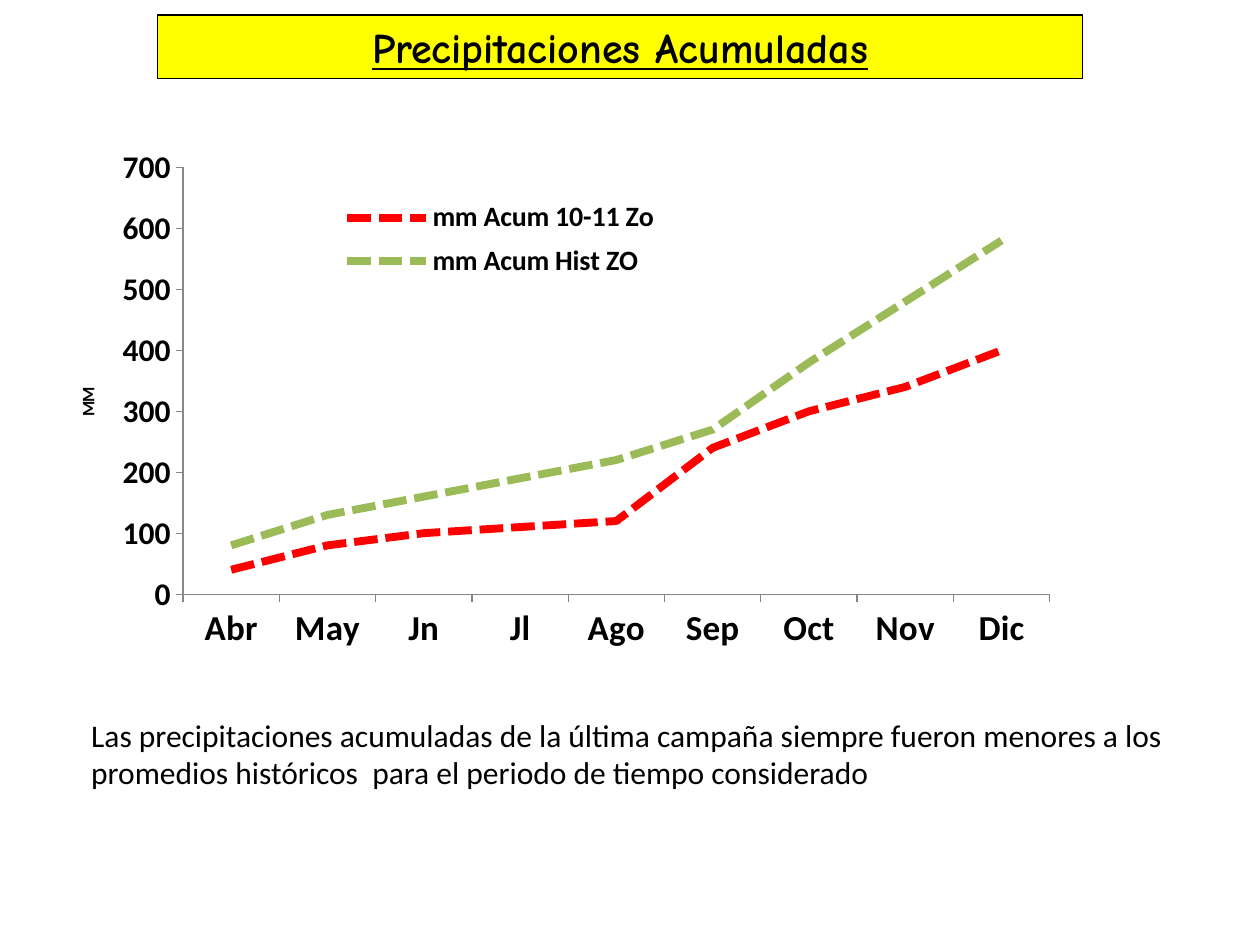
"""Build the slide on accumulated rainfall: title, line chart and conclusion."""
from lxml import etree
from pptx import Presentation
from pptx import util as u
from pptx.chart.data import CategoryChartData
from pptx.dml.color import RGBColor
from pptx.enum import chart as charts, dml, text
from pptx.oxml.ns import qn


def style(font, size, name="Calibri", bold=False, color="000000"):
    """Set the face, size, weight and colour of a font."""
    font.name, font.size, font.bold = name, u.Pt(size), bold
    font.color.rgb = RGBColor.from_string(color)


def place(element, index, inner=False, **fractions):
    """Give a chart part a manual layout in fractions of the chart."""
    for old in element.findall(qn("c:layout")):
        element.remove(old)
    layout = etree.Element(qn("c:layout"))
    manual = etree.SubElement(layout, qn("c:manualLayout"))
    if inner:
        etree.SubElement(manual, qn("c:layoutTarget"), val="inner")
    for side in ("x", "y"):
        etree.SubElement(manual, qn(f"c:{side}Mode"), val="edge")
    for side, value in fractions.items():
        etree.SubElement(manual, qn(f"c:{side}"), val=str(value))
    element.insert(index, layout)


deck = Presentation()
deck.slide_width, deck.slide_height = u.Cm(25.4), u.Cm(19.05)
page = deck.slides.add_slide(deck.slide_layouts[5])

title = page.shapes.title
title.left, title.top = u.Cm(3.18), u.Cm(0.3)
title.width, title.height = u.Cm(18.64), u.Cm(1.28)
title.fill.solid()
title.fill.fore_color.rgb = RGBColor.from_string("FFFF00")
title.line.color.rgb = RGBColor.from_string("000000")
title.line.width = u.Pt(0.75)
title.text_frame.vertical_anchor = text.MSO_ANCHOR.MIDDLE
para = title.text_frame.paragraphs[0]
para.alignment = text.PP_ALIGN.CENTER
span = para.add_run()
span.text = "Precipitaciones Acumuladas"
style(span.font, 24, "Comic Neue", bold=True)
span.font.underline = True

rainfall = CategoryChartData()
rainfall.categories = ["Abr", "May", "Jn", "Jl", "Ago", "Sep", "Oct", "Nov", "Dic"]
rainfall.add_series("mm Acum 10-11 Zo", [40, 80, 100, 110, 120, 240, 300, 340, 400])
rainfall.add_series("mm Acum Hist ZO", [80, 130, 160, 190, 220, 270, 380, 480, 580])
chart = page.shapes.add_chart(
    charts.XL_CHART_TYPE.LINE, u.Cm(0), u.Cm(2.77), u.Cm(24.61), u.Cm(12.12), rainfall
).chart
chart.has_title = False
style(chart.font, 10)
chart.plots[0].vary_by_categories = False
place(chart._chartSpace.chart.plotArea, 0, inner=True, x=0.15, y=0.05, w=0.71, h=0.71)

for series, color in zip(chart.plots[0].series, ("FF0000", "9BBB59")):
    series.smooth = False
    series.marker.style = charts.XL_MARKER_STYLE.NONE
    series.format.line.color.rgb = RGBColor.from_string(color)
    series.format.line.width = u.Pt(4.5)
    series.format.line.dash_style = dml.MSO_LINE.SQUARE_DOT

for axis, size in ((chart.category_axis, 20), (chart.value_axis, 18)):
    style(axis.tick_labels.font, size, bold=True)
    axis.has_major_gridlines = False
    axis.major_tick_mark = charts.XL_TICK_MARK.OUTSIDE
    axis.format.line.color.rgb = RGBColor.from_string("868686")

amounts = chart.value_axis
amounts.minimum_scale, amounts.maximum_scale, amounts.major_unit = 0, 700, 100
amounts.tick_labels.number_format = "0"
amounts.tick_labels.number_format_is_linked = False
frame = amounts.axis_title.text_frame
frame._txBody.bodyPr.set("rot", "-5400000")
frame._txBody.bodyPr.set("vert", "horz")
span = frame.paragraphs[0].add_run()
span.text = "MM"
style(span.font, 10, bold=True)
place(amounts.axis_title._element, 1, x=0.06, y=0.41)

chart.has_legend = True
chart.legend.position = charts.XL_LEGEND_POSITION.RIGHT
chart.legend.include_in_layout = False
style(chart.legend.font, 16, bold=True)
place(chart.legend._element, 1, x=0.27, y=0.09, w=0.28, h=0.16)

box = page.shapes.add_textbox(u.Cm(1.59), u.Cm(14.3), u.Cm(22.8), u.Cm(1.8))
box.text_frame.word_wrap = True
span = box.text_frame.paragraphs[0].add_run()
span.text = (
    "Las precipitaciones acumuladas de la última campaña siempre fueron menores a los "
    "promedios históricos  para el periodo de tiempo considerado"
)
style(span.font, 18)

deck.save("out.pptx")
